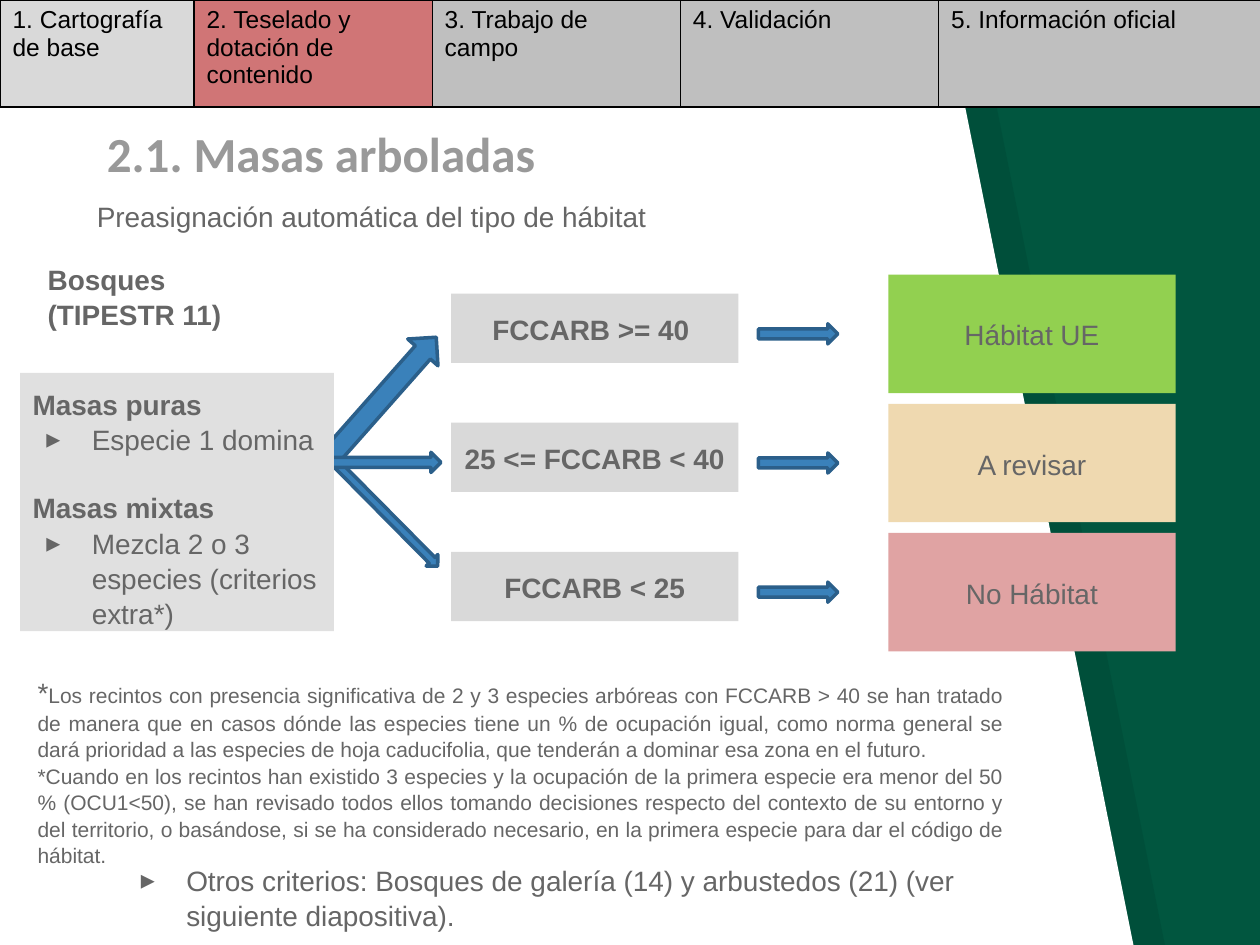
"""Builds the slide on automatic habitat pre-assignment for wooded masses."""
from lxml import etree
from pptx import Presentation
from pptx.dml.color import RGBColor
from pptx.enum import shapes, text
from pptx.oxml import ns
from pptx.util import Inches, Pt

COLORS = {
    "green": "01563F", "white": "FFFFFF", "black": "000000", "ink": "666666",
    "title": "999999", "arrow": "3A81BA", "arrow_edge": "2B5F8A",
    "rule": "D9D9D9", "masses": "E0E0E0", "eu": "92D050", "review": "EFD9B0",
    "none": "E0A3A3", "active": "D07576", "pending": "BFBFBF",
}
ALIGN = text.PP_ALIGN
ANCHOR = text.MSO_ANCHOR


def paint(part, color, alpha=None):
    part.fill.solid()
    part.fill.fore_color.rgb = RGBColor.from_string(COLORS[color])
    if alpha:
        srgb = part.fill._xPr.find(".//" + ns.qn("a:srgbClr"))
        etree.SubElement(srgb, ns.qn("a:alpha"), val=str(alpha * 1000))


def write(frame, content, size=16, font="Arial", color="ink", bold=False, align=ALIGN.LEFT,
          spacing=1.05, before=0, bullet=False, more=False):
    frame.word_wrap = True
    paragraph = frame.add_paragraph() if more else frame.paragraphs[0]
    paragraph.alignment = align
    paragraph.line_spacing = spacing
    paragraph.space_before = Pt(before)
    pieces = content if isinstance(content, list) else [(content, size)]
    for words, points in pieces:
        run = paragraph.add_run()
        run.text = words
        run.font.size = Pt(points)
        run.font.name = font
        run.font.bold = bold
        run.font.color.rgb = RGBColor.from_string(COLORS[color])
    if bullet:
        props = paragraph._p.get_or_add_pPr()
        props.set("marL", str(Inches(0.47)))
        props.set("indent", str(-Inches(0.36)))
        bullet_color = etree.SubElement(props, ns.qn("a:buClr"))
        etree.SubElement(bullet_color, ns.qn("a:srgbClr"), val=COLORS[color])
        etree.SubElement(props, ns.qn("a:buFont"), typeface="Arial")
        etree.SubElement(props, ns.qn("a:buChar"), char="▸")


deck = Presentation()
deck.slide_width, deck.slide_height = Inches(10), Inches(7.5)
slide = deck.slides.add_slide(deck.slide_layouts[6])
paint(slide.background, "green")

for left, color, alpha in [(0.25, "black", 7), (0, "white", None)]:
    corners = [(left, 7.52), (left + 9, 7.52), (left + 7.49, 0)]
    builder = slide.shapes.build_freeform(Inches(left), Inches(-0.02), scale=1)
    builder.add_line_segments([(Inches(x), Inches(y)) for x, y in corners])
    panel = builder.convert_to_shape()
    panel.shadow.inherit = False
    paint(panel, color, alpha)
    panel.line.fill.background()

first_row, row_step = 2.33, 1.025
arrows = [(2.39, 3, 1.29, 0.32, 311.5), (2.52, 4.03, 1.12, 0.13, 45.3), (2.62, 3.59, 0.88, 0.16, 0)]
arrows += [(6.02, first_row + 0.24 + row_step * i, 0.63, 0.16, 0) for i in range(3)]
for left, top, width, height, turn in arrows:
    arrow = slide.shapes.add_shape(shapes.MSO_SHAPE.RIGHT_ARROW, Inches(left), Inches(top),
                                   Inches(width), Inches(height))
    arrow.rotation = turn
    arrow.shadow.inherit = False
    paint(arrow, "arrow")
    arrow.line.color.rgb = RGBColor.from_string(COLORS["arrow_edge"])
    arrow.line.width = Pt(2)

heading = {"size": 28, "font": "Calibri", "color": "title", "bold": True, "spacing": 1}
centered = {"align": ALIGN.CENTER}
strong = {"bold": True}
item = {"bullet": True}
footnotes = [
    [("*", 16), ("Los recintos con presencia significativa de 2 y 3 especies arbóreas con FCCARB > 40 "
                 "se han tratado de manera que en casos dónde las especies tiene un % de ocupación igual, "
                 "como norma general se dará prioridad a las especies de hoja caducifolia, que tenderán a "
                 "dominar esa zona en el futuro.", 12)],
    [("*Cuando en los recintos han existido 3 especies y la ocupación de la primera especie era menor "
      "del 50 % (OCU1<50), se han revisado todos ellos tomando decisiones respecto del contexto de su "
      "entorno y del territorio, o basándose, si se ha considerado necesario, en la primera especie para "
      "dar el código de hábitat.", 12)],
]
blocks = [
    (0.75, 0.92, 7.01, 0.63, None, ANCHOR.BOTTOM, [("2.1. Masas arboladas", heading)]),
    (0.67, 1.47, 5.67, 0.55, None, ANCHOR.TOP, [("Preasignación automática del tipo de hábitat", {})]),
    (0.28, 1.97, 1.89, 0.79, None, ANCHOR.TOP, [("Bosques (TIPESTR 11)", strong)]),
    (0.2, 5.25, 7.87, 1.5, None, ANCHOR.TOP, [(note, {"align": ALIGN.JUSTIFY}) for note in footnotes]),
    (0.91, 6.74, 7.48, 0.55, None, ANCHOR.TOP,
     [("Otros criterios: Bosques de galería (14) y arbustedos (21) (ver siguiente diapositiva).", item)]),
    (0.16, 2.96, 2.49, 2.05, "masses", ANCHOR.TOP,
     [("Masas puras", strong), ("Especie 1 domina", item),
      ("Masas mixtas", {"bold": True, "before": 19}),
      ("Mezcla 2 o 3 especies (criterios extra*)", item)]),
]
rules = [("FCCARB >= 40 ", "Hábitat UE", "eu"), ("25 <= FCCARB < 40", "A revisar", "review"),
         ("FCCARB < 25", "No Hábitat", "none")]
for i, (rule, habitat, color) in enumerate(rules):
    top = first_row + row_step * i
    blocks.append((3.58, top, 2.28, 0.55, "rule", ANCHOR.MIDDLE, [(rule, centered | strong)]))
    blocks.append((7.05, top - 0.15, 2.28, 0.94, color, ANCHOR.MIDDLE, [(habitat, centered)]))

for left, top, width, height, color, anchor, paragraphs in blocks:
    area = [Inches(n) for n in (left, top, width, height)]
    if color:
        block = slide.shapes.add_shape(shapes.MSO_SHAPE.RECTANGLE, *area)
        block.shadow.inherit = False
        paint(block, color)
        block.line.fill.background()
    else:
        block = slide.shapes.add_textbox(*area)
    frame = block.text_frame
    frame.vertical_anchor = anchor
    frame.margin_left = frame.margin_right = frame.margin_top = frame.margin_bottom = Inches(0.1)
    for i, (content, style) in enumerate(paragraphs):
        write(frame, content, more=i > 0, **style)

steps = [
    ("1. Cartografía de base", 1.54, "rule", 82),
    ("2. Teselado y dotación de contenido", 1.89, "active", 82),
    ("3. Trabajo de campo", 1.97, "pending", 49),
    ("4. Validación", 2.05, "pending", 49),
    ("5. Información oficial", 2.56, "pending", 59),
]
progress = slide.shapes.add_table(1, len(steps), 0, 0, Inches(10), Inches(0.85)).table
progress.first_row = progress.horz_banding = False
for i, (label, width, color, alpha) in enumerate(steps):
    progress.columns[i].width = Inches(width)
    cell = progress.cell(0, i)
    write(cell.text_frame, label, size=14, color="black", spacing=1)
    props = cell._tc.get_or_add_tcPr()
    for side, weight in [("L", 0.75), ("R", 0.75), ("T", 0.75), ("B", 1)]:
        border = etree.SubElement(props, ns.qn("a:ln" + side), w=str(Pt(weight)))
        stroke = etree.SubElement(border, ns.qn("a:solidFill"))
        etree.SubElement(stroke, ns.qn("a:srgbClr"), val=COLORS["black"])
    paint(cell, color, alpha)

deck.save("out.pptx")
